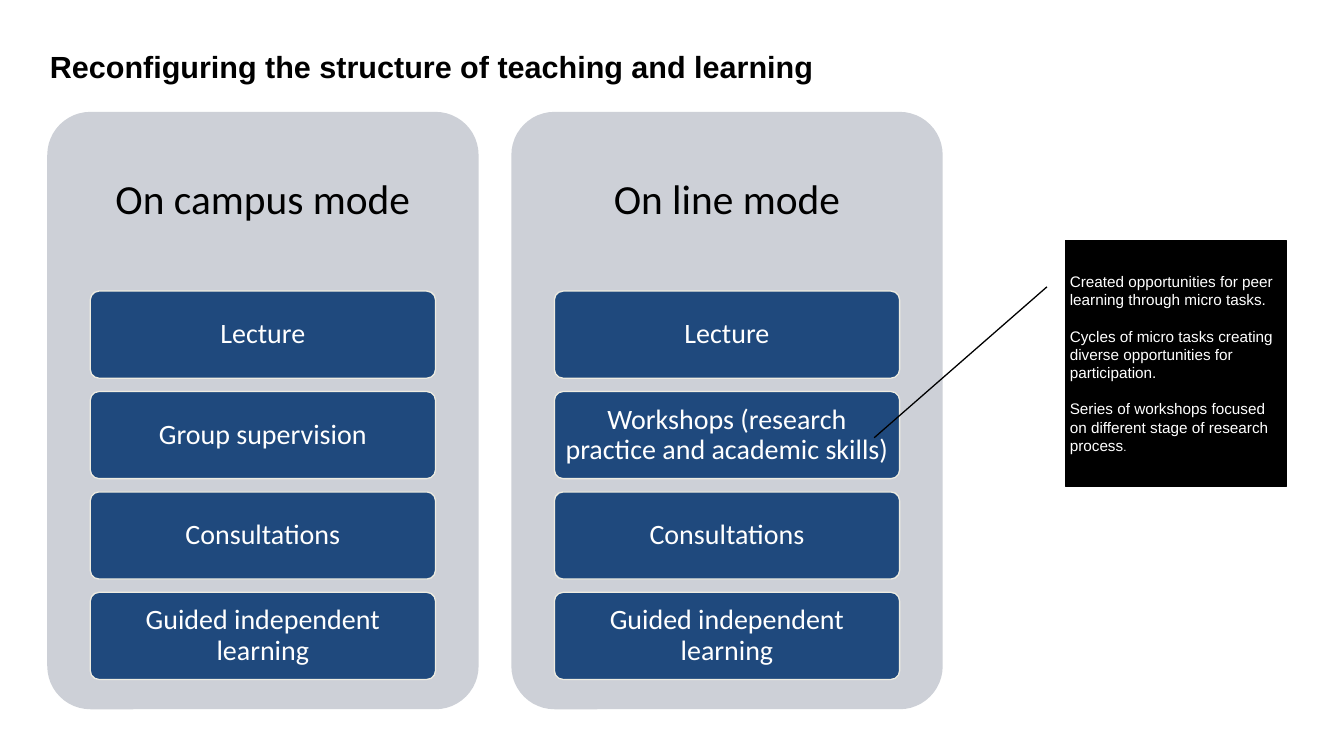
from pptx import Presentation
from pptx.dml.color import RGBColor
from pptx.enum import shapes, text
from pptx.util import Pt

BLACK = RGBColor(0, 0, 0)
WHITE = RGBColor(255, 255, 255)
GREY = RGBColor(0xCD, 0xD0, 0xD7)
NAVY = RGBColor(0x1F, 0x49, 0x7D)
CREAM = RGBColor(0xEE, 0xEC, 0xE1)
SHAPE = shapes.MSO_SHAPE


def add_form(kind, x, y, w, h, fill, edge=None):
    form = slide.shapes.add_shape(kind, Pt(x), Pt(y), Pt(w), Pt(h))
    form.shadow.inherit = False
    form.fill.solid()
    form.fill.fore_color.rgb = fill
    if edge is None:
        form.line.fill.background()
    else:
        form.line.color.rgb = edge
        form.line.width = Pt(2)
    return form


def set_text(form, lines, font, size, color, align, pads, anchor):
    frame = form.text_frame
    frame.text = "\n".join(lines)
    frame.word_wrap = True
    frame.vertical_anchor = anchor
    frame.margin_left = frame.margin_right = Pt(pads[0])
    frame.margin_top = frame.margin_bottom = Pt(pads[1])
    for para in frame.paragraphs:
        para.alignment = align
        for run in para.runs:
            run.font.name = font
            run.font.size = Pt(size)
            run.font.color.rgb = color
    return frame


deck = Presentation()
deck.slide_width = Pt(2111.04)
deck.slide_height = Pt(1187.28)
slide = deck.slides.add_slide(deck.slide_layouts[6])

LEFT, CENTER = text.PP_ALIGN.LEFT, text.PP_ALIGN.CENTER
TOP, MIDDLE = text.MSO_ANCHOR.TOP, text.MSO_ANCHOR.MIDDLE

# Title
title = slide.shapes.add_textbox(Pt(71.3), Pt(72), Pt(1722), Pt(172))
frame = set_text(title, ["Reconfiguring the structure of teaching and learning"],
                 "Arial", 48, BLACK, LEFT, (7.2, 3.6), TOP)
frame.paragraphs[0].runs[0].font.bold = True

# Two teaching modes, each a panel with a heading and four boxes
modes = [
    ("On campus mode", ["Lecture", "Group supervision", "Consultations",
                        "Guided independent learning"]),
    ("On line mode", ["Lecture", "Workshops (research practice and academic skills)",
                      "Consultations", "Guided independent learning"]),
]
panel_y, panel_w, head_h = 175.7, 677.5, 281.5
box_w, box_h, step = 542.2, 136.8, 157.7
for col, (name, parts) in enumerate(modes):
    x = 74.2 + col * 729
    panel = add_form(SHAPE.ROUNDED_RECTANGLE, x, panel_y, panel_w, 938.2, GREY)
    panel.adjustments[0] = 0.1

    head = slide.shapes.add_textbox(Pt(x), Pt(panel_y), Pt(panel_w), Pt(head_h))
    frame = set_text(head, [name], "Calibri", 65, BLACK, CENTER, (19.4, 19.4), MIDDLE)
    frame.paragraphs[0].line_spacing = 0.9

    for row, part in enumerate(parts):
        box = add_form(SHAPE.ROUNDED_RECTANGLE, x + (panel_w - box_w) / 2,
                       panel_y + head_h + row * step, box_w, box_h, NAVY, CREAM)
        box.adjustments[0] = 0.1
        frame = set_text(box, [part], "Calibri", 44, WHITE, CENTER, (8.6, 6.5), MIDDLE)
        frame.paragraphs[0].line_spacing = 0.9

# Callout on the workshops
note = add_form(SHAPE.LINE_CALLOUT_1, 1673.3, 378, 347.8, 385.9, BLACK, BLACK)
for i, value in enumerate([0.188, -0.083, 0.802, -0.863]):
    note.adjustments[i] = value
frame = set_text(note, [
    "Created opportunities for peer learning through micro tasks.",
    "Cycles of micro tasks creating diverse opportunities for participation.",
    "Series of workshops focused on different stage of research process",
], "Arial", 24, WHITE, LEFT, (7.2, 3.6), MIDDLE)
for para in frame.paragraphs[:-1]:
    para.space_after = Pt(28)
stop = frame.paragraphs[-1].add_run()
stop.text = "."
stop.font.name = "Arial"
stop.font.size = Pt(18)
stop.font.color.rgb = WHITE

deck.save("out.pptx")
